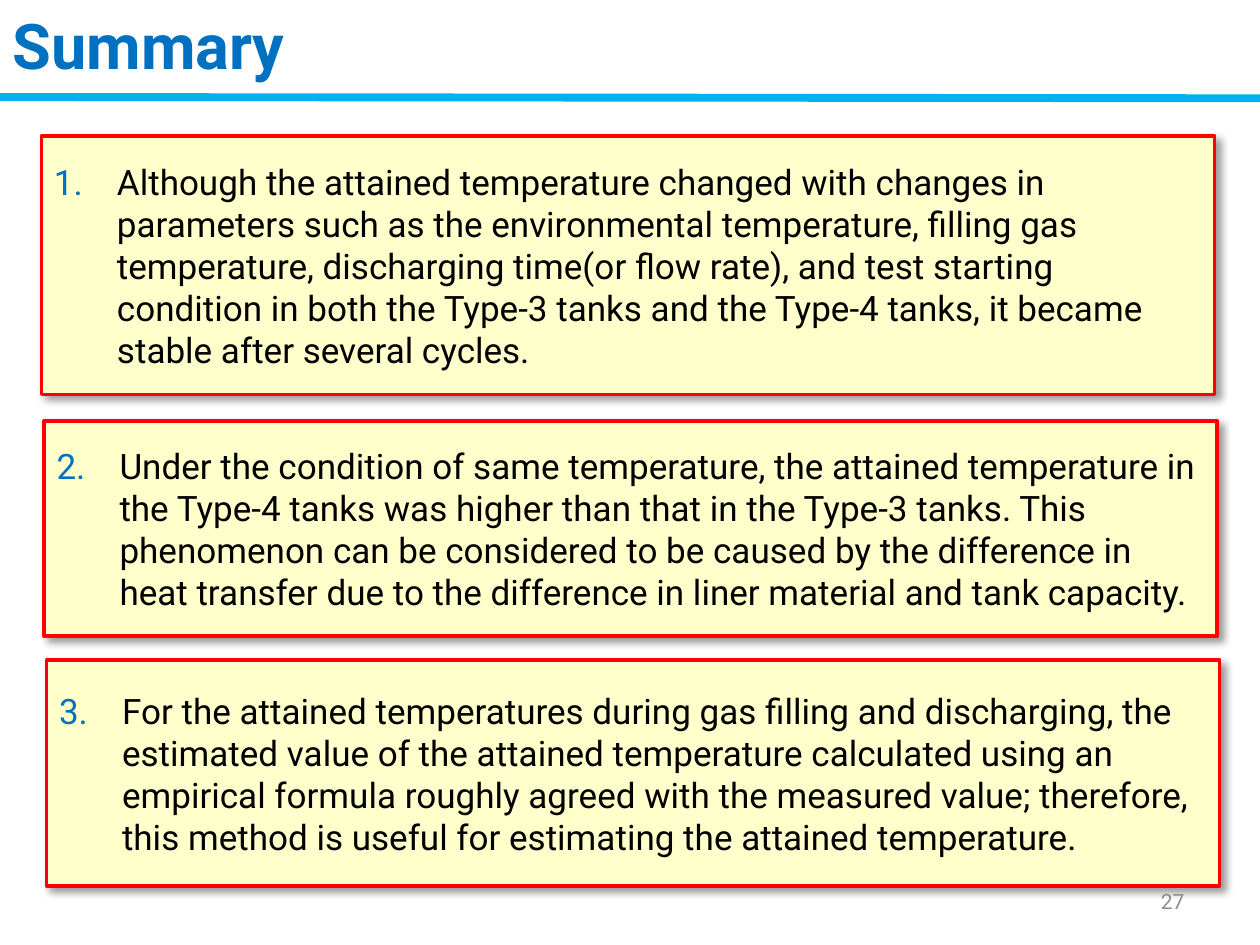
from dataclasses import dataclass

from lxml.etree import SubElement
from pptx import Presentation
from pptx.dml.color import RGBColor
from pptx.enum.shapes import MSO_CONNECTOR as Connector, MSO_SHAPE as Shape
from pptx.enum.text import MSO_ANCHOR as Anchor, MSO_AUTO_SIZE as AutoSize, PP_ALIGN as Align
from pptx.oxml.ns import qn
from pptx.util import Pt


@dataclass(frozen=True)
class Theme:
    """Colours, font and type sizes of the slide."""
    face: str = "Roboto"
    heading: str = "0070C0"
    rule: str = "00B0F0"
    panel: str = "FFFFCC"
    border: str = "FF0000"
    ink: str = "000000"
    muted: str = "8C8C8C"
    title_size: int = 36
    body_size: int = 20
    number_size: int = 12


THEME = Theme()
PANEL_WIDTH = 670.32
INDENT = 36
CONCLUSIONS = [
    (77.76, 147.6,
     "Although the attained temperature changed with changes in parameters such as the "
     "environmental temperature, filling gas temperature, discharging time(or flow rate), "
     "and test starting condition in both the Type-3 tanks and the Type-4 tanks, it became "
     "stable after several cycles."),
    (240.48, 123.12,
     "Under the condition of same temperature, the attained temperature in the Type-4 tanks "
     "was higher than that in the Type-3 tanks. This phenomenon can be considered to be "
     "caused by the difference in heat transfer due to the difference in liner material and "
     "tank capacity."),
    (377.28, 128.88,
     "For the attained temperatures during gas filling and discharging, the estimated value "
     "of the attained temperature calculated using an empirical formula roughly agreed with "
     "the measured value; therefore, this method is useful for estimating the attained "
     "temperature."),
]


def apply(target, values):
    """Set each attribute of the target from a dict."""
    for name, value in values.items():
        setattr(target, name, value)


def style_text(paragraph, size, colour, bold=False):
    """Give a paragraph its theme font, size and colour."""
    apply(paragraph.font, {"name": THEME.face, "size": Pt(size), "bold": bold})
    paragraph.font.color.rgb = RGBColor.from_string(colour)


def add_element(parent, tag, **attributes):
    """Append a drawing element with the given attributes."""
    return SubElement(parent, qn(tag), {key: str(value) for key, value in attributes.items()})


def number_paragraph(paragraph, start):
    """Turn a paragraph into a numbered item with a hanging indent."""
    properties = paragraph._p.get_or_add_pPr()
    apply_indent = {"marL": Pt(INDENT), "indent": -Pt(INDENT)}
    for name, value in apply_indent.items():
        properties.set(name, str(value))
    add_element(add_element(properties, "a:buClr"), "a:srgbClr", val=THEME.heading)
    add_element(properties, "a:buFont", typeface="+mj-lt")
    add_element(properties, "a:buAutoNum", type="arabicPeriod", startAt=start)


def cast_shadow(panel):
    """Put a soft shadow below and right of a panel."""
    panel.shadow.inherit = False
    effects = panel._element.spPr.find(qn("a:effectLst"))
    shadow = add_element(effects, "a:outerShdw", blurRad=Pt(4), dist=Pt(3),
                         dir=45 * 60000, algn="tl", rotWithShape=0)
    colour = add_element(shadow, "a:srgbClr", val=THEME.ink)
    add_element(colour, "a:alpha", val=40000)


def add_header(slide, left, top, width, height):
    """Place the title and the rule below it."""
    title = slide.shapes.title
    apply(title, {"left": Pt(left), "top": Pt(top), "width": Pt(width), "height": Pt(height)})
    title.text_frame.text = "Summary"
    apply(title.text_frame, {"vertical_anchor": Anchor.TOP, "word_wrap": True,
                             "auto_size": AutoSize.SHAPE_TO_FIT_TEXT})
    heading = title.text_frame.paragraphs[0]
    heading.alignment = Align.LEFT
    style_text(heading, THEME.title_size, THEME.heading, bold=True)
    rule = slide.shapes.add_connector(Connector.STRAIGHT, Pt(0), Pt(55.44), Pt(720), Pt(56.16))
    rule.line.color.rgb = RGBColor.from_string(THEME.rule)
    rule.line.width = Pt(4.5)
    add_element(rule._element.spPr, "a:effectLst")


def add_conclusion(slide, number, text, left, top, width, height):
    """Place one numbered conclusion in a bordered panel."""
    panel = slide.shapes.add_shape(Shape.RECTANGLE, Pt(left), Pt(top), Pt(width), Pt(height))
    panel.fill.solid()
    panel.fill.fore_color.rgb = RGBColor.from_string(THEME.panel)
    panel.line.color.rgb = RGBColor.from_string(THEME.border)
    panel.line.width = Pt(2)
    cast_shadow(panel)
    panel.text_frame.text = text
    apply(panel.text_frame, {"vertical_anchor": Anchor.MIDDLE, "word_wrap": True})
    conclusion = panel.text_frame.paragraphs[0]
    conclusion.alignment = Align.LEFT
    number_paragraph(conclusion, number)
    style_text(conclusion, THEME.body_size, THEME.ink)


def add_page_number(slide, left, top, width, height):
    """Place the page number at the lower right."""
    footer = slide.shapes.add_textbox(Pt(left), Pt(top), Pt(width), Pt(height)).text_frame
    footer.text = "27"
    apply(footer, {"vertical_anchor": Anchor.MIDDLE, "word_wrap": True})
    footer.paragraphs[0].alignment = Align.RIGHT
    style_text(footer.paragraphs[0], THEME.number_size, THEME.muted)


def main():
    """Build the summary slide and save it."""
    deck = Presentation()
    apply(deck, {"slide_width": Pt(720), "slide_height": Pt(540)})
    slide = deck.slides.add_slide(deck.slide_layouts[5])
    add_header(slide, 0, 0, 565.92, 51.12)
    for number, (top, height, text) in reversed(list(enumerate(CONCLUSIONS, 1))):
        left = 22.32 + 1.44 * number
        add_conclusion(slide, number, text, left, top, PANEL_WIDTH, height)
    add_page_number(slide, 516.24, 500.4, 167.76, 28.8)
    deck.save("out.pptx")


if __name__ == "__main__":
    main()
